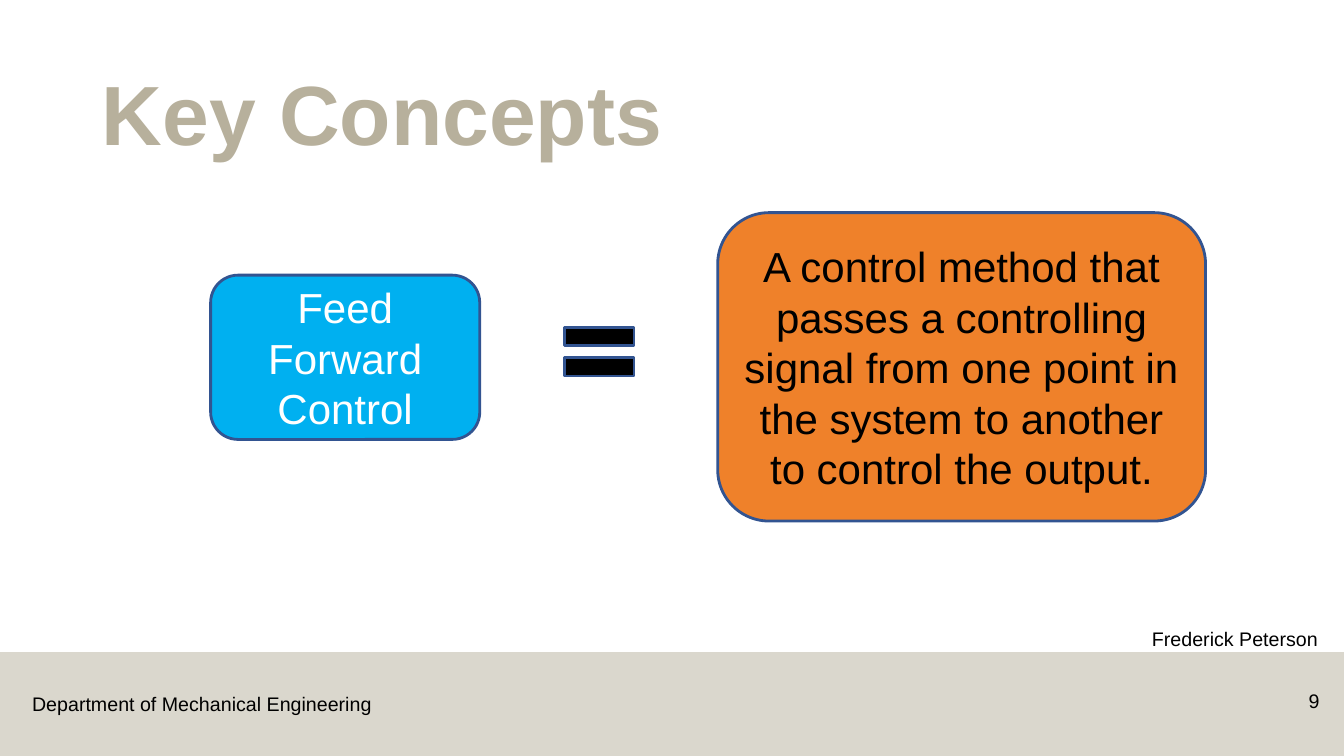
from lxml import etree
from pptx import Presentation
from pptx.dml.color import RGBColor
from pptx.enum.shapes import MSO_SHAPE
from pptx.enum.text import MSO_ANCHOR, MSO_AUTO_SIZE, PP_ALIGN
from pptx.oxml.ns import qn
from pptx.util import Inches, Pt

RECT, ROUND = MSO_SHAPE.RECTANGLE, MSO_SHAPE.ROUNDED_RECTANGLE
LEFT, MID, RIGHT = PP_ALIGN.LEFT, PP_ALIGN.CENTER, PP_ALIGN.RIGHT
TOP, CORE, BASE = MSO_ANCHOR.TOP, MSO_ANCHOR.MIDDLE, MSO_ANCHOR.BOTTOM
FIXED = MSO_AUTO_SIZE.NONE

COLS, ROWS = 40, 30
BLACK, WHITE, SAND = "000000", "FFFFFF", "B7B09C"
BLUE, ORANGE, EDGE = "00B0F0", "EF812A", "325491"


def tint(code):
    return RGBColor.from_string(code)


class Deck:
    """Style and current slide; boxes are (col, row, cols, rows)."""

    font = "Arial"

    def __init__(self):
        self.prs = Presentation()
        self.prs.slide_width = Inches(13.33)
        self.prs.slide_height = Inches(7.5)
        self.slide = self.prs.slides.add_slide(self.prs.slide_layouts[5])

    def place(self, box):
        col = self.prs.slide_width / COLS
        row = self.prs.slide_height / ROWS
        return [round(n * unit) for n, unit in zip(box, (col, row, col, row))]

    def letter(self, shape, text, size, color, align=LEFT, anchor=TOP, bold=False):
        frame = shape.text_frame
        frame.word_wrap = True
        frame.auto_size = FIXED
        frame.vertical_anchor = anchor
        para = frame.paragraphs[0]
        para.alignment = align
        run = para.add_run()
        run.text = text
        font = run.font
        font.name, font.size, font.bold = self.font, Pt(size), bold
        font.color.rgb = tint(color)
        return para

    def title(self, box, text):
        shape = self.slide.shapes.title
        shape.left, shape.top, shape.width, shape.height = self.place(box)
        para = self.letter(shape, text, 60, SAND, anchor=BASE, bold=True)
        para.line_spacing = 0.9

    def label(self, box, text, align=LEFT):
        shape = self.slide.shapes.add_textbox(*self.place(box))
        self.letter(shape, text, 14, BLACK, align)

    def block(self, kind, box, fill, line=EDGE):
        shape = self.slide.shapes.add_shape(kind, *self.place(box))
        shape.shadow.inherit = False
        shape.fill.solid()
        shape.fill.fore_color.rgb = tint(fill)
        if line:
            shape.line.color.rgb = tint(line)
            shape.line.width = Pt(2)
        else:
            shape.line.fill.background()
        return shape

    def band(self, box, fill, share):
        shape = self.block(RECT, box, fill, None)
        color = shape.element.spPr.find(qn("a:solidFill"))[0]
        etree.SubElement(color, qn("a:alpha")).set("val", str(share * 1000))

    def card(self, box, text, fill, color):
        shape = self.block(ROUND, box, fill)
        self.letter(shape, text, 30, color, MID, CORE)


def main():
    deck = Deck()

    # Footer
    deck.band((0, 25.88, COLS, 4.12), SAND, 50)
    deck.label((0.66, 27.28, 10.77, 1.36), "Department of Mechanical Engineering")
    deck.label((37.26, 27.16, 2.31, 1.6), "9", RIGHT)
    deck.label((33.99, 24.68, 6, 1.36), "Frederick Peterson")

    # Title
    deck.title((2.73, 3, 34.5, 3.68), "Key Concepts")

    # Term
    deck.card((6.27, 10.92, 8.01, 6.52), "Feed Forward Control", BLUE, WHITE)

    # Equals sign
    for step in range(2):
        deck.block(RECT, (16.8, 13 + 1.2 * step, 2.07, 0.72), BLACK)

    # Meaning
    deck.card(
        (21.36, 8.44, 14.52, 12.24),
        "A control method that passes a controlling signal from one point "
        "in the system to another to control the output.",
        ORANGE, BLACK,
    )

    deck.prs.save("out.pptx")


if __name__ == "__main__":
    main()
